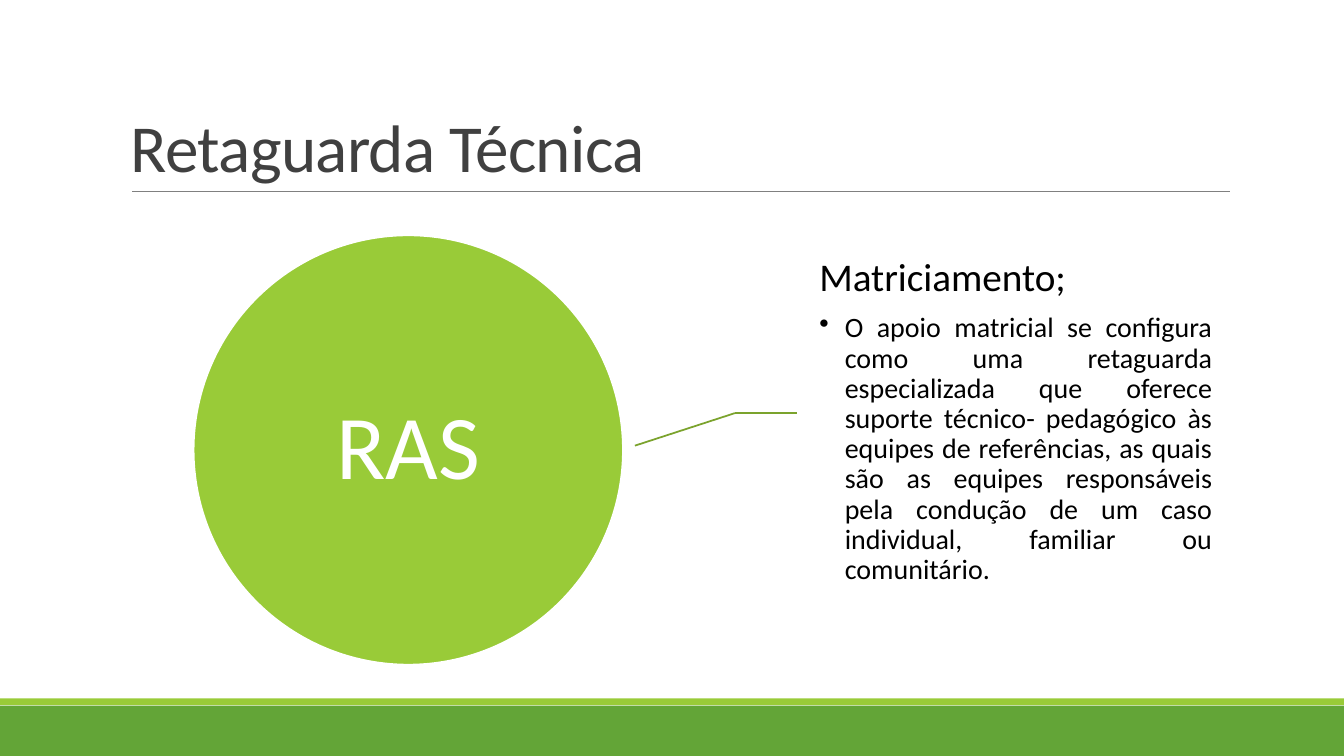
from dataclasses import dataclass

from lxml import etree
from pptx import Presentation
from pptx.dml.color import RGBColor
from pptx.enum.shapes import MSO_CONNECTOR, MSO_SHAPE
from pptx.enum.text import MSO_ANCHOR, PP_ALIGN
from pptx.oxml.ns import qn
from pptx.util import Cm, Pt

WIDTH, HEIGHT = 33.87, 19.05


@dataclass(frozen=True)
class Theme:
    font: str = "Calibri"
    green: str = "63A537"
    lime: str = "99CB38"
    leader: str = "7BA32D"
    rule: str = "808080"
    heading: str = "404040"
    text: str = "000000"
    white: str = "FFFFFF"
    title_size: int = 48
    circle_size: int = 65
    topic_size: int = 28
    body_size: int = 20


class SlideBuilder:
    def __init__(self, slide, theme):
        self.slide = slide
        self.theme = theme

    def shape(self, kind, x, y, w, h, fill, outline=None):
        sp = self.slide.shapes.add_shape(kind, Cm(x), Cm(y), Cm(w), Cm(h))
        sp.shadow.inherit = False
        sp.fill.solid()
        sp.fill.fore_color.rgb = RGBColor.from_string(fill)
        if outline:
            sp.line.color.rgb = RGBColor.from_string(outline)
            sp.line.width = Pt(1.25)
        else:
            sp.line.fill.background()
        return sp

    def line(self, start, end, color, width):
        points = [Cm(v) for v in (*start, *end)]
        cxn = self.slide.shapes.add_connector(MSO_CONNECTOR.STRAIGHT, *points)
        cxn.line.color.rgb = RGBColor.from_string(color)
        cxn.line.width = Pt(width)
        etree.SubElement(cxn._element.spPr, qn("a:effectLst"))

    def textbox(self, x, y, w, h):
        return self.slide.shapes.add_textbox(Cm(x), Cm(y), Cm(w), Cm(h))

    def frame(self, sp, anchor, inset_x, inset_y):
        tf = sp.text_frame
        tf.word_wrap = True
        tf.vertical_anchor = anchor
        tf.margin_left = tf.margin_right = Cm(inset_x)
        tf.margin_top = tf.margin_bottom = Cm(inset_y)
        return tf

    def paragraph(self, p, text, size, color, align, spacing=0.9, after=0):
        p.alignment = align
        p.line_spacing = spacing
        p.space_after = Pt(after)
        r = p.add_run()
        r.text = text
        r.font.name = self.theme.font
        r.font.size = Pt(size)
        r.font.color.rgb = RGBColor.from_string(color)
        return r

    def bullet(self, p, indent):
        pPr = p._p.get_or_add_pPr()
        pPr.set("marL", str(Cm(indent)))
        pPr.set("indent", str(-Cm(indent)))
        etree.SubElement(pPr, qn("a:buChar"), char="•")


def main():
    prs = Presentation()
    prs.slide_width, prs.slide_height = Cm(WIDTH), Cm(HEIGHT)
    theme = Theme()
    s = SlideBuilder(prs.slides.add_slide(prs.slide_layouts[6]), theme)

    s.shape(MSO_SHAPE.RECTANGLE, 0, 17.78, WIDTH, 1.27, theme.green)
    s.shape(MSO_SHAPE.RECTANGLE, 0, 17.6, WIDTH, 0.17, theme.lime)
    s.line((3.33, 4.83), (30.99, 4.83), theme.rule, 0.5)

    tf = s.frame(s.textbox(3.05, 0.79, 27.94, 4.04), MSO_ANCHOR.BOTTOM, 0.25, 0.13)
    r = s.paragraph(tf.paragraphs[0], "Retaguarda Técnica", theme.title_size,
                    theme.heading, PP_ALIGN.LEFT, spacing=0.85)
    r.font._element.set("spc", "-50")

    circle = s.shape(MSO_SHAPE.OVAL, 4.88, 5.93, 10.82, 10.82, theme.lime, theme.white)
    tf = s.frame(circle, MSO_ANCHOR.MIDDLE, 0, 0)
    s.paragraph(tf.paragraphs[0], "RAS", theme.circle_size, theme.white, PP_ALIGN.CENTER)

    bend = (18.52, 10.41)
    s.line((16, 11.23), bend, theme.leader, 1.25)
    s.line(bend, (20.09, 10.41), theme.leader, 1.25)

    tf = s.frame(s.textbox(20.09, 5.93, 11.02, 8.97), MSO_ANCHOR.TOP, 0.56, 0.56)
    s.paragraph(tf.paragraphs[0], "Matriciamento;", theme.topic_size, theme.text,
                PP_ALIGN.JUSTIFY, after=9.8)
    p = tf.add_paragraph()
    s.paragraph(p, "O apoio matricial se configura como uma retaguarda especializada "
                "que oferece suporte técnico- pedagógico às equipes de referências, "
                "as quais são as equipes responsáveis pela condução de um caso "
                "individual, familiar ou comunitário.",
                theme.body_size, theme.text, PP_ALIGN.JUSTIFY, after=3)
    s.bullet(p, 0.64)

    prs.save("out.pptx")


if __name__ == "__main__":
    main()
